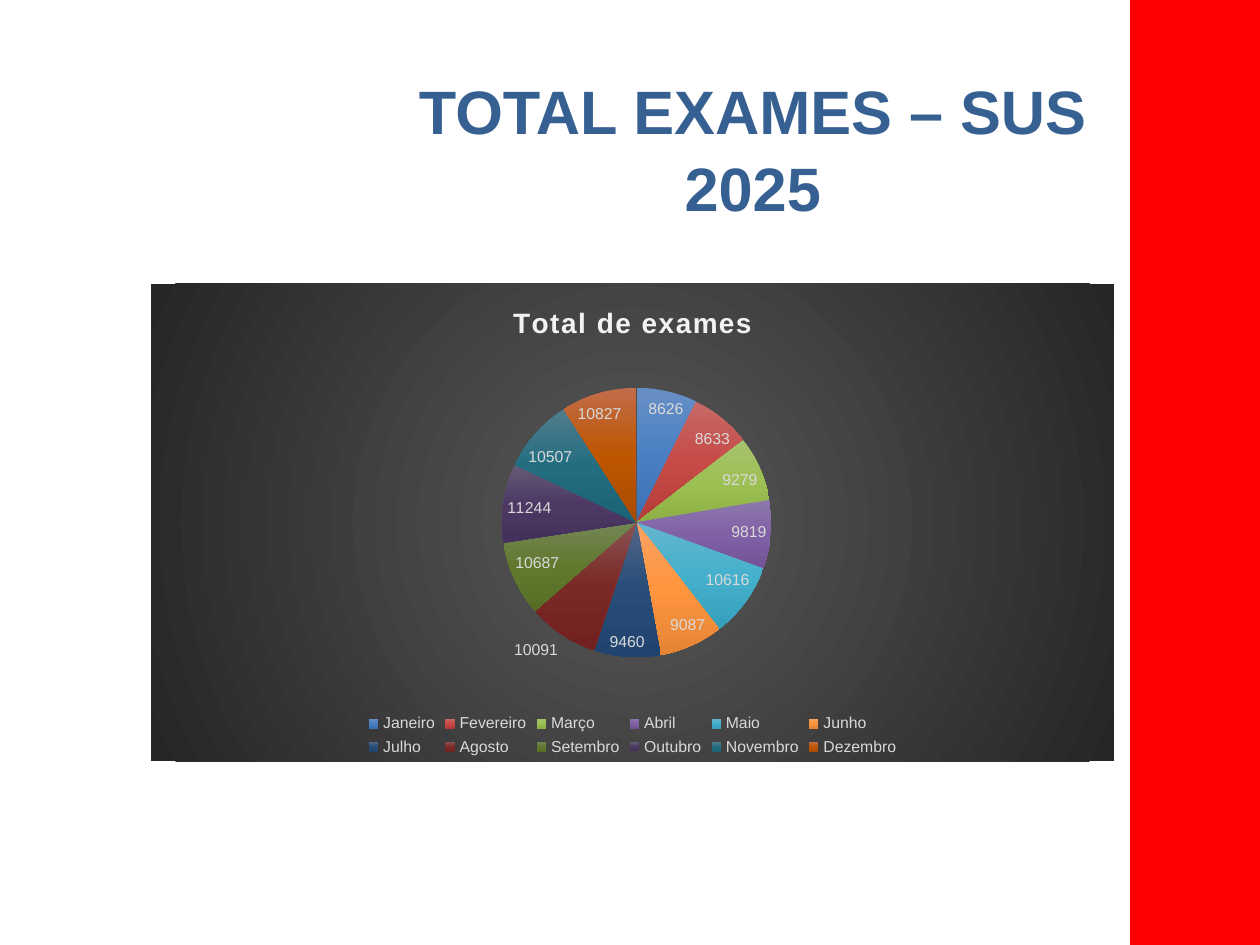
from dataclasses import dataclass

from pptx import Presentation
from pptx.chart.data import CategoryChartData as Data
from pptx.dml.color import RGBColor as RGB
from pptx.enum.chart import XL_CHART_TYPE as Kind
from pptx.enum.chart import XL_LABEL_POSITION as Spot
from pptx.enum.chart import XL_LEGEND_POSITION as Side
from pptx.enum.shapes import MSO_SHAPE as Shape
from pptx.enum.text import MSO_ANCHOR as Anchor
from pptx.enum.text import MSO_AUTO_SIZE as Fit
from pptx.enum.text import PP_ALIGN as Align
from pptx.oxml import parse_xml
from pptx.oxml.ns import nsdecls, qn
from pptx.util import Inches, Pt


@dataclass(frozen=True)
class Theme:
    face: str = "Arial"
    bar: str = "FF0000"
    head: str = "376092"
    name: str = "F2F2F2"
    note: str = "D9D9D9"
    back: tuple = ("595959", "262626")
    head_size: int = 35
    name_size: int = 16
    note_size: int = 9


@dataclass(frozen=True)
class Month:
    name: str
    exams: int
    tones: tuple  # top, middle and bottom of the slice


LOOK = Theme()
MONTHS = [
    Month("Janeiro", 8626, ("688FC5", "4A80C3", "3B72B3")),
    Month("Fevereiro", 8633, ("C76967", "C64B47", "B63C39")),
    Month("Março", 9279, ("A6C36F", "9DC054", "8DB045")),
    Month("Abril", 9819, ("8E78AC", "8061A5", "715396")),
    Month("Maio", 10616, ("66B5CD", "45B0CC", "36A0BC")),
    Month("Junho", 9087, ("FAA263", "FF953E", "E58435")),
    Month("Julho", 9460, ("536686", "284D79", "20446E")),
    Month("Agosto", 10091, ("885353", "7B2926", "71211F")),
    Month("Setembro", 10687, ("748655", "60792D", "566F25")),
    Month("Outubro", 11244, ("665B76", "4D3964", "44315B")),
    Month("Novembro", 10507, ("517D8C", "236D81", "1B6376")),
    Month("Dezembro", 10827, ("C16D4B", "BE5600", "A94C00")),
]
LINEAR = '<a:lin ang="5400000" scaled="0"/>'
RADIAL = ('<a:path path="circle"><a:fillToRect l="50000" t="50000" '
          'r="50000" b="50000"/></a:path>')


def blend(tones: tuple, form: str):
    """Gradient fill with evenly spaced stops."""
    step = 100000 // (len(tones) - 1)
    stops = "".join(f'<a:gs pos="{i * step}"><a:srgbClr val="{tone}"/></a:gs>'
                    for i, tone in enumerate(tones))
    return parse_xml(f'<a:gradFill {nsdecls("a")} rotWithShape="1">'
                     f'<a:gsLst>{stops}</a:gsLst>{form}</a:gradFill>')


def style(font, size: int, tone: str, bold: bool = False) -> None:
    font.name, font.size, font.bold = LOOK.face, Pt(size), bold
    font.color.rgb = RGB.from_string(tone)


def add_bar(slide) -> None:
    bar = slide.shapes.add_shape(Shape.RECTANGLE, Inches(8.98), 0,
                                 Inches(1.25), Inches(7.5))
    bar.shadow.inherit = False
    bar.fill.solid()
    bar.fill.fore_color.rgb = bar.line.color.rgb = RGB.from_string(LOOK.bar)
    bar.line.width = Pt(2)


def add_head(slide, lines: list[str]) -> None:
    head = slide.shapes.title
    head.left, head.top = Inches(3.2), Inches(0.5)
    head.width, head.height = Inches(5.55), Inches(1.28)
    frame = head.text_frame
    frame.word_wrap, frame.auto_size = False, Fit.SHAPE_TO_FIT_TEXT
    frame.vertical_anchor = Anchor.TOP
    for i, line in enumerate(lines):
        para = frame.add_paragraph() if i else frame.paragraphs[0]
        para.alignment, para.line_spacing = Align.CENTER, 1.05
        para.space_before = Pt(0)
        run = para.add_run()
        run.text = line
        style(run.font, LOOK.head_size, LOOK.head, True)


def add_pie(slide, name: str, months: list[Month]) -> None:
    data = Data()
    data.categories = [m.name for m in months]
    data.add_series(name, [m.exams for m in months])
    chart = slide.shapes.add_chart(Kind.PIE, Inches(1.2), Inches(2.25),
                                   Inches(7.64), Inches(3.79), data).chart
    style(chart.font, 10, "000000")

    # Dark radial backdrop
    back = parse_xml(f'<c:spPr {nsdecls("c", "a")}><a:ln><a:noFill/></a:ln></c:spPr>')
    back.insert(0, blend(LOOK.back, RADIAL))
    chart._chartSpace.find(qn("c:chart")).addnext(back)

    # Chart title
    chart.has_title = True
    chart.chart_title.include_in_layout = False
    run = chart.chart_title.text_frame.paragraphs[0].add_run()
    run.text = name
    style(run.font, LOOK.name_size, LOOK.name, True)
    run.font._element.set("spc", "100")

    # Legend
    chart.has_legend = True
    chart.legend.position = Side.BOTTOM
    chart.legend.include_in_layout = False
    style(chart.legend.font, LOOK.note_size, LOOK.note)

    # Slices
    plot = chart.plots[0]
    plot.vary_by_categories = True
    pie = plot.series[0]
    for i, month in enumerate(months):
        pie.points[i].format.line.fill.background()
        area = pie._element.findall(qn("c:dPt"))[i].find(qn("c:spPr"))
        area.insert(0, blend(month.tones, LINEAR))

    # Value labels
    plot.has_data_labels = True
    notes = plot.data_labels
    notes.show_value, notes.show_percentage = True, False
    notes.position = Spot.BEST_FIT
    style(notes.font, LOOK.note_size, LOOK.note)


def main() -> None:
    deck = Presentation()
    deck.slide_width, deck.slide_height = Inches(10), Inches(7.5)
    slide = deck.slides.add_slide(deck.slide_layouts[5])
    add_bar(slide)
    add_head(slide, ["TOTAL EXAMES – SUS", "2025"])
    add_pie(slide, "Total de exames", MONTHS)
    deck.save("out.pptx")


if __name__ == "__main__":
    main()
